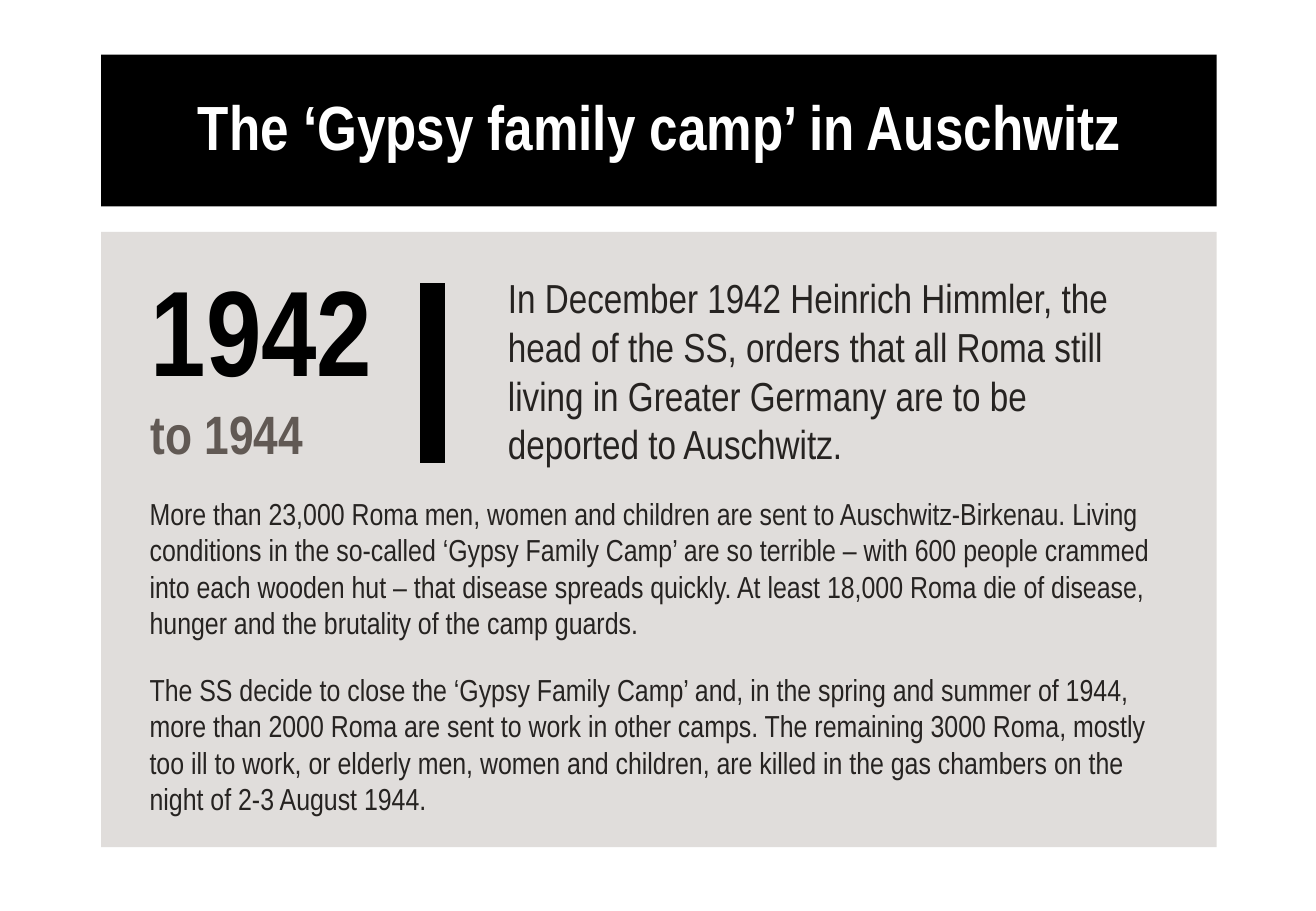
from lxml import etree
from pptx import Presentation, util as u
from pptx.dml.color import RGBColor
from pptx.enum import shapes, text
from pptx.oxml.ns import qn

WIDTH, HEIGHT = 10.83, 7.5
COLUMNS, ROWS = 130, 90
BLACK, WHITE, INK, BROWN, STONE = "000000", "FFFFFF", "262321", "615954", "99908A"


def colour(code):
    return RGBColor.from_string(code)


class Panel:
    """Draws the elements of one slide on a grid of columns and rows."""

    font = "Arial Narrow"

    def __init__(self, slide):
        self.slide = slide

    def place(self, column, row):
        return u.Inches(column * WIDTH / COLUMNS), u.Inches(row * HEIGHT / ROWS)

    def block(self, column, row, columns, rows, fill, opacity=100):
        area = self.slide.shapes.add_shape(
            shapes.MSO_SHAPE.RECTANGLE, *self.place(column, row), *self.place(columns, rows))
        area.shadow.inherit = False
        area.line.fill.background()
        area.fill.solid()
        area.fill.fore_color.rgb = colour(fill)
        if opacity < 100:
            tint = area._element.spPr.find(".//" + qn("a:srgbClr"))
            etree.SubElement(tint, qn("a:alpha"), val=str(opacity * 1000))
        return area

    def rule(self, column, top, bottom, points):
        bar = self.slide.shapes.add_connector(
            shapes.MSO_CONNECTOR.STRAIGHT, *self.place(column, top), *self.place(column, bottom))
        bar.line.color.rgb = colour(BLACK)
        bar.line.width = u.Pt(points)
        etree.SubElement(bar._element.spPr, qn("a:effectLst"))

    def box(self, column, row, columns, rows):
        return self.slide.shapes.add_textbox(
            *self.place(column, row), *self.place(columns, rows))

    def typeset(self, holder, wording, styles, align=text.PP_ALIGN.LEFT, spacing=None, after=0):
        frame = holder.text_frame
        frame.word_wrap = True
        frame.vertical_anchor = text.MSO_ANCHOR.MIDDLE
        frame.text = wording
        for paragraph in frame.paragraphs:
            paragraph.alignment = align
            paragraph.space_after = u.Pt(after)
            if spacing:
                paragraph.line_spacing = spacing
            for run, (size, ink, bold) in zip(paragraph.runs, styles):
                run.font.name = self.font
                run.font.size = u.Pt(size)
                run.font.bold = bold
                run.font.color.rgb = colour(ink)


def main():
    deck = Presentation()
    deck.slide_width, deck.slide_height = u.Inches(WIDTH), u.Inches(HEIGHT)
    panel = Panel(deck.slides.add_slide(deck.slide_layouts[6]))

    panel.block(10, 22.9, 110.2, 60.8, STONE, opacity=30)
    panel.typeset(panel.box(13.7, 25.2, 35.3, 20.8), "1942\vto 1944",
                  [(72, BLACK, True), (32, BROWN, True)])
    panel.rule(42.7, 28, 45.7, 15)
    panel.typeset(panel.box(49, 26.2, 65.2, 20.8),
                  "In December 1942 Heinrich Himmler, the head of the SS, orders that all Roma "
                  "still living in Greater Germany are to be deported to Auschwitz.",
                  [(24, INK, False)])

    title = panel.block(10, 5.4, 110.2, 15, BLACK)
    panel.typeset(title, "The ‘Gypsy family camp’ in Auschwitz", [(37, WHITE, True)],
                  align=text.PP_ALIGN.CENTER, spacing=0.9)

    history = (
        "More than 23,000 Roma men, women and children are sent to Auschwitz-Birkenau. "
        "Living conditions in the so-called ‘Gypsy Family Camp’ are so terrible – with 600 "
        "people crammed into each wooden hut – that disease spreads quickly. At least 18,000 "
        "Roma die of disease, hunger and the brutality of the camp guards.",
        "The SS decide to close the ‘Gypsy Family Camp’ and, in the spring and summer of 1944, "
        "more than 2000 Roma are sent to work in other camps. The remaining 3000 Roma, mostly "
        "too ill to work, or elderly men, women and children, are killed in the gas chambers "
        "on the night of 2-3 August 1944.",
    )
    panel.typeset(panel.box(13.6, 53.5, 103.4, 22.6), "\n".join(history),
                  [(18, INK, False)], after=18)

    deck.save("out.pptx")


if __name__ == "__main__":
    main()
